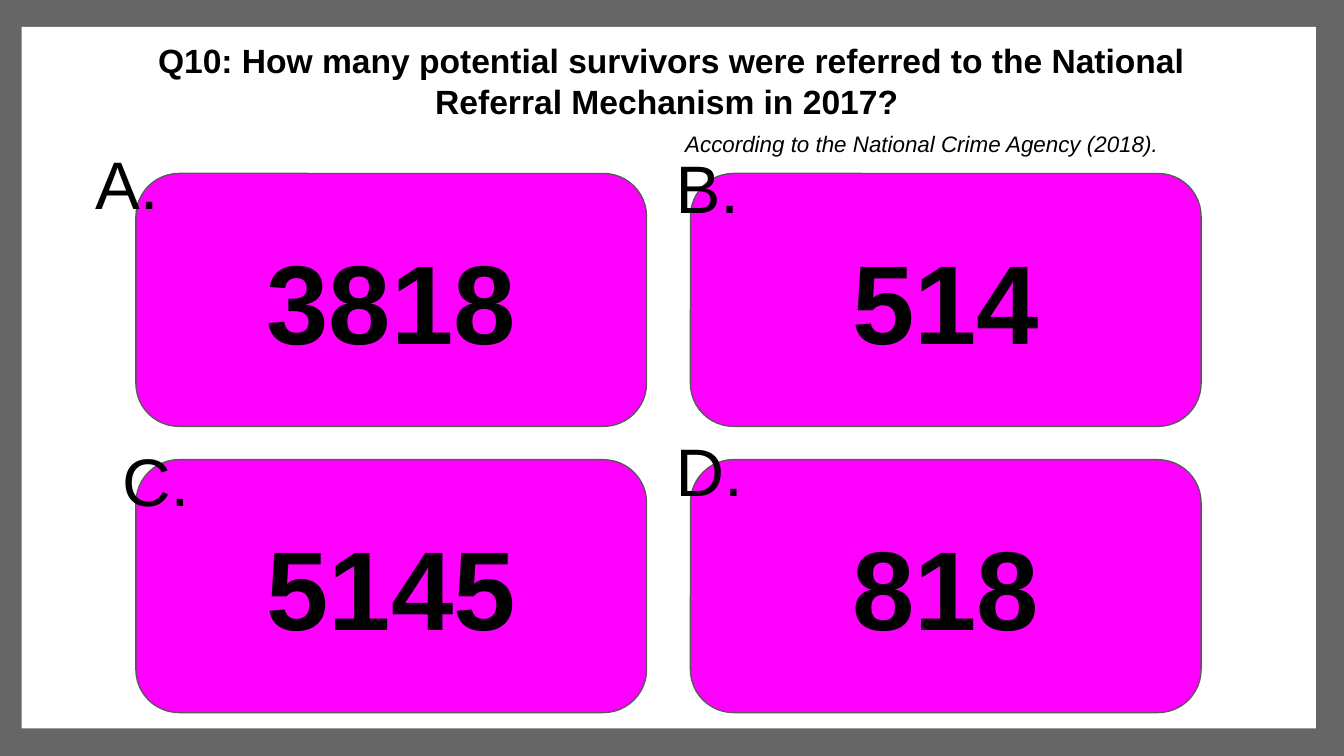
from pptx import Presentation
from pptx.dml.color import RGBColor as Rgb
from pptx.enum.shapes import MSO_SHAPE as Kind
from pptx.enum.text import MSO_ANCHOR as Anchor, PP_ALIGN as Align
from pptx.util import Cm, Pt

COLORS = {"frame": "666666", "panel": "FFFFFF", "card": "FF00FF",
          "edge": "595959", "ink": "000000"}


class Quiz:
    """Hold the style and the current slide of a quiz."""

    font = "Arial"
    inset = Cm(0.25)

    def __init__(self, slide):
        self.slide = slide

    def color(self, name):
        return Rgb.from_string(COLORS[name])

    def shape(self, kind, box, fill, edge=None):
        item = self.slide.shapes.add_shape(kind, *map(Cm, box))
        item.shadow.inherit = False
        item.fill.solid()
        item.fill.fore_color.rgb = self.color(fill)
        if edge:
            item.line.color.rgb = self.color(edge)
            item.line.width = Pt(0.75)
        else:
            item.line.fill.background()
        return item

    def letter(self, item, text, size, align=Align.LEFT, anchor=Anchor.TOP,
               bold=False, italic=False):
        frame = item.text_frame
        frame.word_wrap = True
        frame.vertical_anchor = anchor
        frame.margin_left = frame.margin_right = self.inset
        frame.margin_top = frame.margin_bottom = self.inset
        para = frame.paragraphs[0]
        para.text = text
        para.alignment = align
        font = para.font
        font.name, font.size = self.font, Pt(size)
        font.bold, font.italic = bold, italic
        font.color.rgb = self.color("ink")

    def panel(self, box, fill):
        self.shape(Kind.RECTANGLE, box, fill)

    def card(self, box, text):
        item = self.shape(Kind.ROUNDED_RECTANGLE, box, "card", "edge")
        item.adjustments[0] = 0.17
        self.letter(item, text, 60, Align.CENTER, Anchor.MIDDLE, bold=True)

    def label(self, box, text, size, **style):
        item = self.slide.shapes.add_textbox(*map(Cm, box))
        self.letter(item, text, size, **style)


def main():
    deck = Presentation()
    deck.slide_width, deck.slide_height = Cm(25.4), Cm(14.29)
    quiz = Quiz(deck.slides.add_slide(deck.slide_layouts[6]))

    quiz.panel((-0.05, 0, 25.45, 14.29), "frame")
    quiz.panel((0.41, 0.51, 24.46, 13.26), "panel")
    quiz.label((1.83, 0.51, 21.72, 2.87),
               "Q10: How many potential survivors were referred to the "
               "National Referral Mechanism in 2017? ",
               18, align=Align.CENTER, bold=True)

    for i, answer in enumerate(("3818", "514", "5145", "818")):
        row, col = divmod(i, 2)
        quiz.card((2.57 + col * 10.48, 3.28 + row * 5.41, 9.65, 4.78), answer)

    quiz.label((12.7, 2.21, 10.01, 1.17),
               "According to the National Crime Agency (2018).",
               12, italic=True)

    marks = {"A.": (1.55, 2.44, 2.44, 2.01), "B.": (12.52, 2.51, 1.83, 1.83),
             "C.": (2.06, 8.05, 2.44, 1.83), "D.": (12.52, 7.87, 2.77, 1.83)}
    for mark, box in marks.items():
        quiz.label(box, mark, 36)

    deck.save("out.pptx")


if __name__ == "__main__":
    main()
